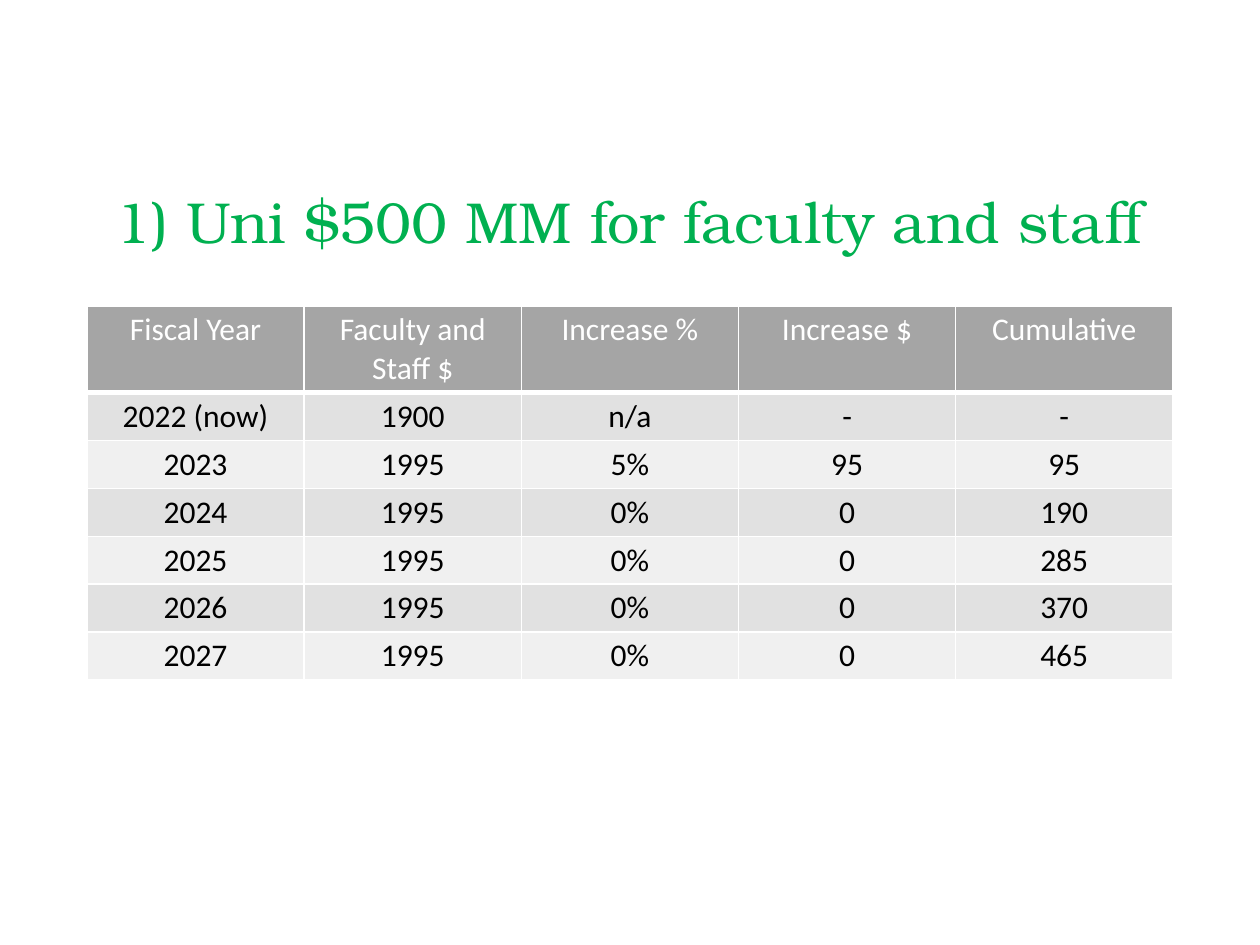
import pptx
import pptx.dml.color
import pptx.enum.text
import pptx.oxml.ns
import pptx.util
from lxml import etree

SLIDE_W, SLIDE_H = 10, 7.5
LEFT, WIDTH = 0.69, 8.62
HEADER_H, ROW_H = 0.68, 0.38
HEADER_FILL, BAND_FILLS = "A5A5A5", ("E1E1E1", "F0F0F0")
ROWS = [
    ("Fiscal Year", "Faculty and Staff $", "Increase %", "Increase $", "Cumulative"),
    ("2022 (now)", "1900", "n/a", "-", "-"),
    ("2023", "1995", "5%", "95", "95"),
    ("2024", "1995", "0%", "0", "190"),
    ("2025", "1995", "0%", "0", "285"),
    ("2026", "1995", "0%", "0", "370"),
    ("2027", "1995", "0%", "0", "465"),
]


def inches(*values):
    return [pptx.util.Inches(v) for v in values]


def rgb(value):
    return pptx.dml.color.RGBColor.from_string(value)


def format_text(tf, size, font, color):
    """Centre the first paragraph and format its run."""
    p = tf.paragraphs[0]
    p.alignment = pptx.enum.text.PP_ALIGN.CENTER
    r = p.runs[0]
    r.font.size = pptx.util.Pt(size)
    r.font.name = font
    r.font.bold = False
    r.font.color.rgb = rgb(color)


def add_title(slide, text):
    sp = slide.shapes.title
    sp.left, sp.top, sp.width, sp.height = inches(LEFT, 1.24, WIDTH, 1.09)
    tf = sp.text_frame
    tf.text = text
    tf.vertical_anchor = pptx.enum.text.MSO_ANCHOR.MIDDLE
    tf.paragraphs[0].line_spacing = 0.9
    format_text(tf, 33, "TeX Gyre Bonum", "00B050")


def set_borders(cell, color, bottom):
    """Draw 1 pt sides and a bottom of the given width; call before filling."""
    qn = pptx.oxml.ns.qn
    tcPr = cell._tc.get_or_add_tcPr()
    for side, width in (("L", 1), ("R", 1), ("T", 1), ("B", bottom)):
        ln = etree.SubElement(tcPr, qn(f"a:ln{side}"), w=str(pptx.util.Pt(width)))
        fill = etree.SubElement(ln, qn("a:solidFill"))
        etree.SubElement(fill, qn("a:srgbClr"), val=color)


def format_cell(cell, text, is_header, fill):
    cell.margin_left = cell.margin_right = pptx.util.Pt(5.4)
    cell.margin_top = cell.margin_bottom = pptx.util.Pt(2.7)
    set_borders(cell, "FFFFFF", 3 if is_header else 1)
    cell.fill.solid()
    cell.fill.fore_color.rgb = rgb(fill)
    cell.text_frame.text = text
    format_text(cell.text_frame, 18, "Calibri", "FFFFFF" if is_header else "000000")


def add_budget_table(slide, rows):
    n_cols = len(rows[0])
    height = HEADER_H + ROW_H * (len(rows) - 1)
    table = slide.shapes.add_table(
        len(rows), n_cols, *inches(LEFT, 2.43, WIDTH, height)).table
    for col in table.columns:
        col.width = pptx.util.Inches(WIDTH / n_cols)
    for i, values in enumerate(rows):
        is_header = i == 0
        table.rows[i].height = pptx.util.Inches(HEADER_H if is_header else ROW_H)
        fill = HEADER_FILL if is_header else BAND_FILLS[(i - 1) % 2]
        for j, text in enumerate(values):
            format_cell(table.cell(i, j), text, is_header, fill)


def main():
    prs = pptx.Presentation()
    prs.slide_width, prs.slide_height = inches(SLIDE_W, SLIDE_H)
    slide = prs.slides.add_slide(prs.slide_layouts[5])
    add_title(slide, "1) Uni $500 MM for faculty and staff")
    add_budget_table(slide, ROWS)
    prs.save("out.pptx")


if __name__ == "__main__":
    main()
